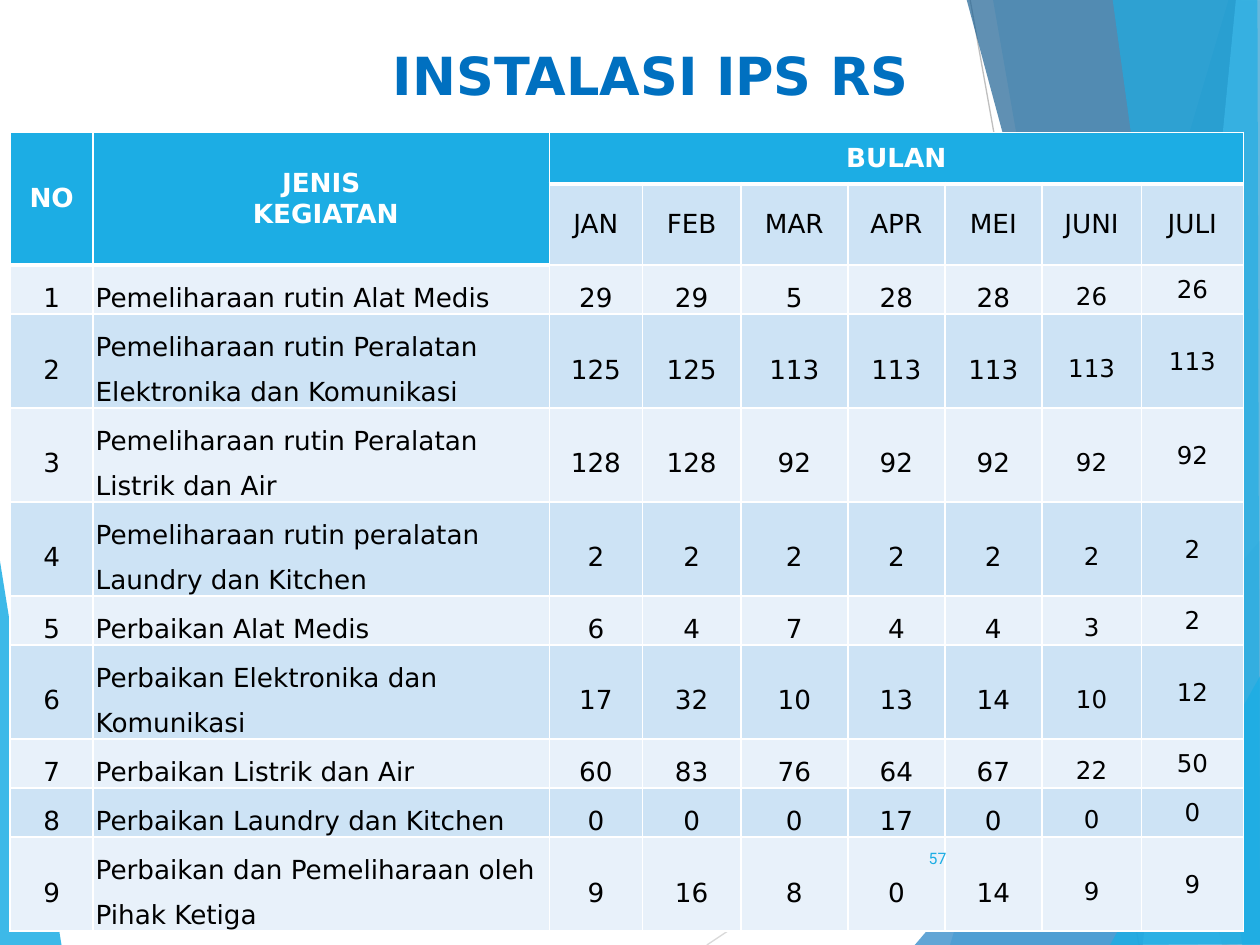
from dataclasses import dataclass

from lxml.etree import SubElement
from pptx import Presentation
from pptx.dml.color import RGBColor as RGB
from pptx.enum.text import MSO_ANCHOR as ANCHOR, PP_ALIGN as ALIGN
from pptx.oxml.ns import qn
from pptx.util import Inches, Pt


@dataclass(frozen=True)
class Theme:
    font: str = "DejaVu Sans"
    number_font: str = "Roboto"
    title: str = "0070C0"
    accent: str = "1CADE4"
    blue: str = "2683C6"
    navy: str = "1D6294"
    sky: str = "77CEEF"
    band_dark: str = "CDE3F5"
    band_light: str = "E8F1FA"
    white: str = "FFFFFF"
    black: str = "000000"
    title_size: float = 30
    table_size: float = 15
    small_size: float = 14
    number_size: float = 9


T = Theme()

# Backdrop: fill colour, opacity in percent, corner points in inches
LEFT_FACET = (T.accent, 85, [(-0.01, 4.39), (0.49, 7.51), (-0.01, 7.5)])
RIGHT_FACETS = [
    (T.accent, 30, [(9.75, 0), (7.54, 7.5), (10.02, 7.51), (10.01, 0.01)]),
    (T.accent, 20, [(7.88, -0.01), (9.19, 7.5), (10.01, 7.5), (10.01, -0.01)]),
    (T.blue, 72, [(7.26, 7.5), (10, 4.29), (10.01, 7.5)]),
    (T.navy, 70, [(7.67, -0.01), (9.7, 7.5), (10.01, 7.49), (10.01, -0.01)]),
    (T.sky, 70, [(9.81, -0.01), (9.07, 7.5), (10.01, 7.5), (10, -0.01)]),
    (T.accent, 65, [(8.83, -0.01), (9.86, 7.5), (10, 7.5), (9.98, -0.01)]),
    (T.accent, 80, [(8.81, 7.5), (10.01, 5.35), (10.01, 7.49)]),
]
RAYS = [("D9D9D9", (5.61, 7.5), (10.01, 4.57)),
        ("BFBFBF", (7.7, 0), (9.04, 7.5))]

# Table content
COL_WIDTHS = [0.66, 3.62, 0.74, 0.78, 0.85, 0.77, 0.77, 0.79, 0.81]
HEADER_HEIGHTS = [0.41, 0.4]
ONE_LINE, TWO_LINES = 0.39, 0.69
MONTHS = ["JAN", "FEB", "MAR", "APR", "MEI", "JUNI", "JULI"]
ACTIVITIES = [
    (ONE_LINE, "Pemeliharaan rutin Alat Medis", [29, 29, 5, 28, 28, 26, 26]),
    (TWO_LINES, "Pemeliharaan rutin Peralatan Elektronika dan Komunikasi",
     [125, 125, 113, 113, 113, 113, 113]),
    (TWO_LINES, "Pemeliharaan rutin Peralatan Listrik dan Air",
     [128, 128, 92, 92, 92, 92, 92]),
    (TWO_LINES, "Pemeliharaan rutin peralatan Laundry dan Kitchen",
     [2, 2, 2, 2, 2, 2, 2]),
    (ONE_LINE, "Perbaikan Alat Medis", [6, 4, 7, 4, 4, 3, 2]),
    (TWO_LINES, "Perbaikan Elektronika dan Komunikasi",
     [17, 32, 10, 13, 14, 10, 12]),
    (ONE_LINE, "Perbaikan Listrik dan Air", [60, 83, 76, 64, 67, 22, 50]),
    (ONE_LINE, "Perbaikan Laundry dan Kitchen", [0, 0, 0, 17, 0, 0, 0]),
    (TWO_LINES, "Perbaikan dan Pemeliharaan oleh Pihak Ketiga",
     [9, 16, 8, 0, 14, 9, 9]),
]
HEADER_INSETS = (0.15, 0.08, 0.15, 0.08)
BODY_INSETS = (0.02, 0.02, 0.02, 0)
LATE_INSETS = (0.01, 0.01, 0.01, 0)


def write(tf, lines, size, color, bold=False, align=ALIGN.CENTER,
          spacing=None, font=T.font):
    for i, line in enumerate(lines):
        p = tf.add_paragraph() if i else tf.paragraphs[0]
        p.alignment = align
        if spacing:
            p.line_spacing = spacing
        r = p.add_run()
        r.text = line
        r.font.name, r.font.size, r.font.bold = font, Pt(size), bold
        r.font.color.rgb = RGB.from_string(color)


def add_facet(s, color, opacity, points):
    corners = [(Inches(x), Inches(y)) for x, y in points]
    builder = s.shapes.build_freeform(*corners[0])
    builder.add_line_segments(corners[1:], close=True)
    sp = builder.convert_to_shape()
    sp.shadow.inherit = False
    sp.line.fill.background()
    sp.fill.solid()
    sp.fill.fore_color.rgb = RGB.from_string(color)
    clr = next(sp.element.spPr.iter(qn("a:srgbClr")))
    SubElement(clr, qn("a:alpha"), val=str(opacity * 1000))


def add_ray(s, color, start, end):
    line = s.shapes.add_connector(1, *map(Inches, start + end))
    line.line.color.rgb = RGB.from_string(color)
    line.line.width = Pt(0.75)
    SubElement(line.element.spPr, qn("a:effectLst"))


def add_backdrop(s):
    add_facet(s, *LEFT_FACET)
    for ray in RAYS:
        add_ray(s, *ray)
    for facet in RIGHT_FACETS:
        add_facet(s, *facet)


def add_title(s, text):
    title = s.shapes.title
    title.left, title.top = Inches(2.5), Inches(0.24)
    title.width, title.height = Inches(5.33), Inches(0.7)
    title.text_frame.vertical_anchor = ANCHOR.MIDDLE
    write(title.text_frame, [text], T.title_size, T.title, bold=True)
    # Bring the title in front of the backdrop
    title.element.getparent().append(title.element)


def style_cell(cell, fill, insets, top=1, bottom=1):
    cell.vertical_anchor = ANCHOR.MIDDLE
    (cell.margin_left, cell.margin_top,
     cell.margin_right, cell.margin_bottom) = map(Inches, insets)
    tc_pr = cell._tc.get_or_add_tcPr()
    for side, width in (("L", 1), ("R", 1), ("T", top), ("B", bottom)):
        ln = SubElement(tc_pr, qn(f"a:ln{side}"), w=str(Pt(width)))
        SubElement(SubElement(ln, qn("a:solidFill")), qn("a:srgbClr"), val=T.white)
    cell.fill.solid()
    cell.fill.fore_color.rgb = RGB.from_string(fill)


def fill_header(table):
    last = len(COL_WIDTHS) - 1
    for c in range(last + 1):
        style_cell(table.cell(0, c), T.accent, HEADER_INSETS, bottom=3)
        fill = T.accent if c < 2 else T.band_dark
        style_cell(table.cell(1, c), fill, HEADER_INSETS, top=3,
                   bottom=3 if c < 2 else 1)
    for c, end, lines in ((0, (1, 0), ["NO"]),
                          (1, (1, 1), ["JENIS", " KEGIATAN"]),
                          (2, (0, last), ["BULAN"])):
        cell = table.cell(0, c)
        cell.merge(table.cell(*end))
        write(cell.text_frame, lines, T.table_size, T.white, bold=True)
    for c, month in enumerate(MONTHS, 2):
        write(table.cell(1, c).text_frame, [month], T.table_size, T.black)


def fill_body(table):
    last = len(COL_WIDTHS) - 1
    for n, (_, activity, counts) in enumerate(ACTIVITIES, 1):
        fill = T.band_light if n % 2 else T.band_dark
        for c, value in enumerate([n, activity, *counts]):
            cell = table.cell(n + 1, c)
            late = c >= last - 1  # JUNI and JULI are set smaller
            style_cell(cell, fill, LATE_INSETS if late else BODY_INSETS,
                       top=3 if n == 1 and c < 2 else 1)
            write(cell.text_frame, [str(value)],
                  T.small_size if late else T.table_size, T.black,
                  align=ALIGN.LEFT if c == 1 else ALIGN.CENTER,
                  spacing=None if c == last else 1.5)


def add_activity_table(s):
    heights = HEADER_HEIGHTS + [height for height, _, _ in ACTIVITIES]
    table = s.shapes.add_table(
        len(heights), len(COL_WIDTHS), Inches(0.08), Inches(1.05),
        Inches(sum(COL_WIDTHS)), Inches(sum(heights))).table
    table.horz_banding = False
    for col, width in zip(table.columns, COL_WIDTHS):
        col.width = Inches(width)
    for row, height in zip(table.rows, heights):
        row.height = Inches(height)
    fill_header(table)
    fill_body(table)


def add_page_number(s, number):
    box = s.shapes.add_textbox(Inches(7.05), Inches(6.61), Inches(0.56), Inches(0.4))
    tf = box.text_frame
    tf.word_wrap = True
    tf.vertical_anchor = ANCHOR.MIDDLE
    write(tf, [number], T.number_size, T.accent, align=ALIGN.RIGHT,
          font=T.number_font)


def main():
    prs = Presentation()
    prs.slide_width, prs.slide_height = Inches(10), Inches(7.5)
    s = prs.slides.add_slide(prs.slide_layouts[5])
    add_backdrop(s)
    add_title(s, "INSTALASI IPS RS")
    add_activity_table(s)
    add_page_number(s, "57")
    prs.save("out.pptx")


if __name__ == "__main__":
    main()
